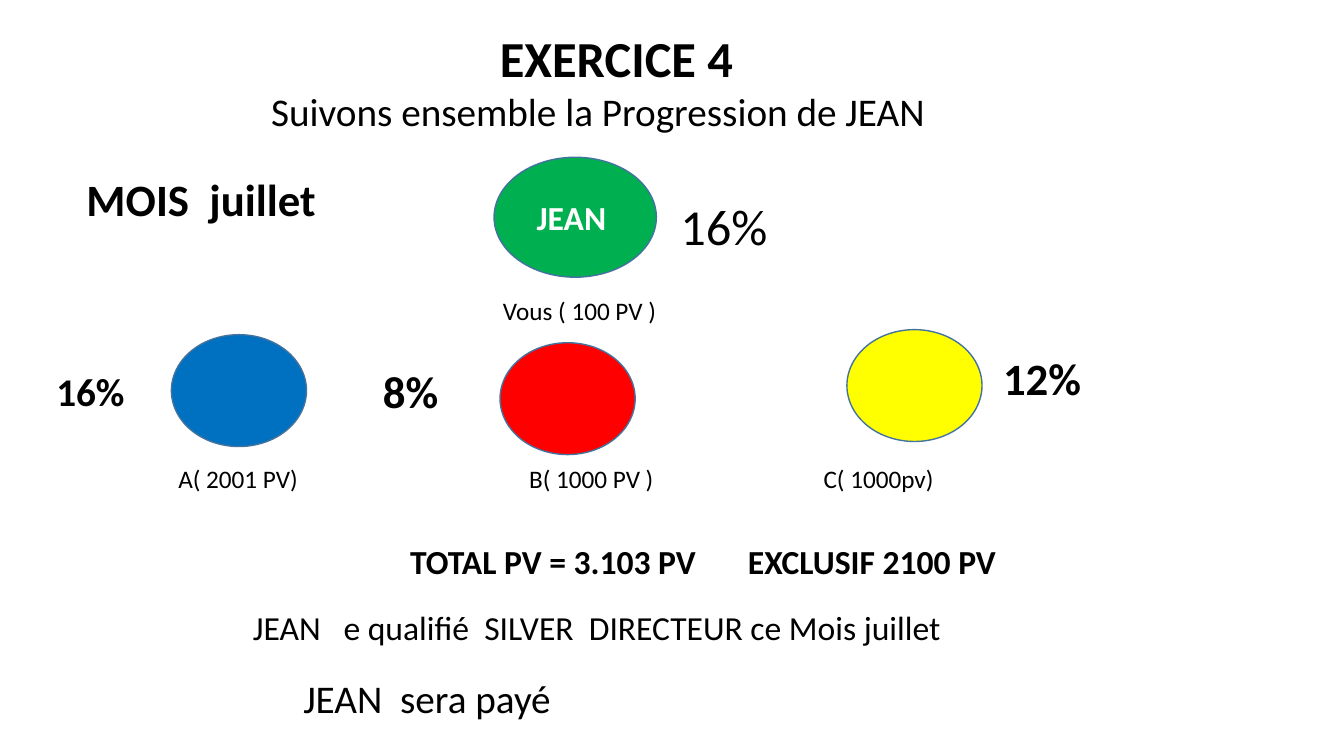
from pptx import Presentation
from pptx.dml.color import RGBColor
from pptx.enum import shapes, text
from pptx.util import Inches, Pt

BLACK, WHITE, OUTLINE = "000000", "FFFFFF", "43739E"

LABELS = [
    ("EXERCICE 4", 4.86, 0.22, 3.5, 0.71, 36, True),
    ("Suivons ensemble la Progression de JEAN", 2.59, 0.82, 7.5, 0.57, 28, False),
    ("MOIS  juillet", 0.76, 1.65, 2.94, 0.64, 32, True),
    ("16%", 6.65, 1.89, 1.76, 0.71, 36, False),
    ("Vous ( 100 PV )", 4.89, 2.88, 2.5, 0.4, 18, False),
    ("16%", 0.46, 3.59, 1.21, 0.57, 28, True),
    ("8%", 3.7, 3.56, 1.26, 0.64, 32, True),
    ("12%", 9.85, 3.43, 1.26, 0.64, 32, True),
    ("A( 2001 PV)", 1.67, 4.55, 2.0, 0.4, 18, False),
    ("B( 1000 PV )", 5.15, 4.55, 2.0, 0.4, 18, False),
    ("C( 1000pv)", 8.07, 4.55, 2.0, 0.4, 18, False),
    ("TOTAL PV = 3.103 PV", 3.97, 5.32, 3.3, 0.5, 24, True),
    ("EXCLUSIF 2100 PV", 7.32, 5.32, 3.3, 0.5, 24, True),
    ("JEAN   e qualifié  SILVER  DIRECTEUR ce Mois juillet", 2.41, 5.97, 8.5, 0.5, 24, False),
    ("JEAN  sera payé", 2.91, 6.64, 4.5, 0.57, 28, False),
]

TEAM = [(1.7, 3.32, "0070C0"), (4.96, 3.4, "FF0000"), (8.4, 3.27, "FFFF00")]


def rgb(value):
    """Turn a hex string into a colour."""
    return RGBColor.from_string(value)


def write(frame, words, size, bold, color):
    """Add one run to the first paragraph of a text frame."""
    run = frame.paragraphs[0].add_run()
    run.text = words
    run.font.name = "Calibri"
    run.font.size = Pt(size)
    run.font.bold = bold
    run.font.color.rgb = rgb(color)


def add_label(slide, words, left, top, width, height, size, bold):
    """Place a line of black text."""
    label = slide.shapes.add_textbox(Inches(left), Inches(top), Inches(width), Inches(height))
    label.text_frame.word_wrap = True
    write(label.text_frame, words, size, bold, BLACK)


def add_member(slide, left, top, color, width=1.34, height=1.11):
    """Draw the coloured ellipse of one network member."""
    member = slide.shapes.add_shape(
        shapes.MSO_SHAPE.OVAL, Inches(left), Inches(top), Inches(width), Inches(height))
    member.shadow.inherit = False
    member.fill.solid()
    member.fill.fore_color.rgb = rgb(color)
    member.line.color.rgb = rgb(OUTLINE)
    member.line.width = Pt(1)
    return member


def main():
    """Build the exercise slide and save it."""
    deck = Presentation()
    deck.slide_width, deck.slide_height = Inches(13.33), Inches(7.5)
    slide = deck.slides.add_slide(deck.slide_layouts[6])

    jean = add_member(slide, 4.9, 1.56, "00B050", 1.61, 1.19)
    jean.text_frame.vertical_anchor = text.MSO_ANCHOR.MIDDLE
    jean.text_frame.paragraphs[0].alignment = text.PP_ALIGN.CENTER
    write(jean.text_frame, "JEAN ", 24, True, WHITE)

    for member in TEAM:
        add_member(slide, *member)
    for label in LABELS:
        add_label(slide, *label)

    deck.save("out.pptx")


if __name__ == "__main__":
    main()
